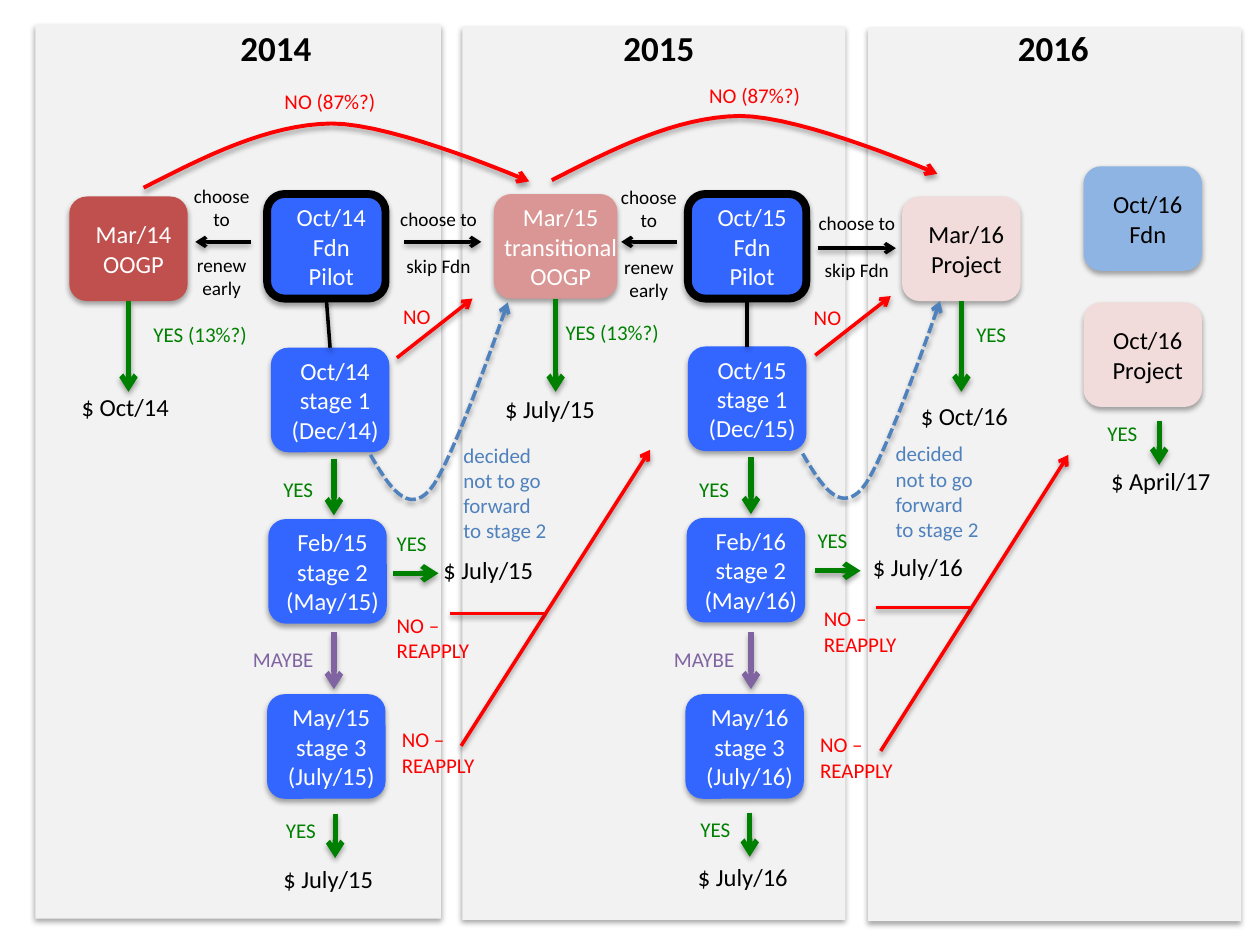
"""Builds a flow chart slide of funding application rounds from 2014 to 2016."""
from lxml.etree import SubElement
from pptx import Presentation
from pptx.dml.color import RGBColor
from pptx.enum.dml import MSO_LINE
from pptx.enum.shapes import MSO_CONNECTOR, MSO_SHAPE
from pptx.enum.text import MSO_ANCHOR, PP_ALIGN
from pptx.oxml.ns import qn
from pptx.util import Inches, Pt

COLORS = {
    "panel": "F2F2F2", "black": "000000", "white": "FFFFFF", "blue": "3366FF",
    "brick": "C0504D", "rose": "D99694", "blush": "F2DCDB", "sky": "8EB4E3",
    "green": "008000", "red": "FF0000", "purple": "8064A2", "steel": "4F81BD",
}
RGB = {name: RGBColor.from_string(value) for name, value in COLORS.items()}


def finish(shape, color=None, width=0, arrow=False, dashed=False):
    """Sets the outline, the arrowhead and the soft shadow of a shape."""
    if color:
        shape.line.color.rgb = RGB[color]
        shape.line.width = Pt(width)
    else:
        shape.line.fill.background()
    if dashed:
        shape.line.dash_style = MSO_LINE.SQUARE_DOT
    properties = shape._element.spPr
    if arrow:
        SubElement(properties.find(qn("a:ln")), qn("a:tailEnd"), type="arrow")
    effects = SubElement(properties, qn("a:effectLst"))
    shadow = SubElement(effects, qn("a:outerShdw"), blurRad=str(Pt(3.1)), dist=str(Pt(1.8)),
                        dir="5400000", algn="t", rotWithShape="0")
    shadow_color = SubElement(shadow, qn("a:srgbClr"), val=COLORS["black"])
    SubElement(shadow_color, qn("a:alpha"), val="35000")


def write(shape, text, size, color, align=PP_ALIGN.LEFT, wrap=False, bold=False, gap=0):
    """Writes formatted lines, with a gap in points between paragraphs."""
    frame = shape.text_frame
    frame.word_wrap = wrap
    frame.text = text
    for index, paragraph in enumerate(frame.paragraphs):
        paragraph.alignment = align
        if index:
            paragraph.space_before = Pt(gap)
        for run in paragraph.runs:
            run.font.name = "Calibri"
            run.font.size = Pt(size)
            run.font.bold = bold
            run.font.color.rgb = RGB[color]


presentation = Presentation()
presentation.slide_width, presentation.slide_height = Inches(10), Inches(7.5)
slide = presentation.slides.add_slide(presentation.slide_layouts[6])
shapes = slide.shapes

for left, top, width in [(6.89, 0.22, 2.96), (3.67, 0.21, 3.04), (0.28, 0.2, 3.22)]:
    panel = shapes.add_shape(MSO_SHAPE.RECTANGLE, Inches(left), Inches(top), Inches(width), Inches(7.09))
    panel.fill.solid()
    panel.fill.fore_color.rgb = RGB["panel"]
    finish(panel)

BOX_WIDTH, BOX_HEIGHT = 0.94, 0.83
box_rows = [
    ("Mar/14\nOOGP", 0.55, 1.56, "brick", "white"),
    ("Oct/14\nFdn\nPilot", 2.12, 1.54, "blue", "white"),
    ("Mar/15\ntransitional\nOOGP", 3.92, 1.54, "rose", "white"),
    ("Oct/15\nFdn\nPilot", 5.46, 1.54, "blue", "white"),
    ("Mar/16\nProject", 7.16, 1.56, "blush", "black"),
    ("Oct/16\nProject", 8.6, 2.4, "blush", "black"),
    ("Oct/16\nFdn", 8.6, 1.32, "sky", "black"),
    ("Oct/14\nstage 1\n(Dec/14)", 2.15, 2.76, "blue", "white"),
    ("Feb/15\nstage 2\n(May/15)", 2.13, 4.12, "blue", "white"),
    ("May/15\nstage 3\n(July/15)", 2.12, 5.51, "blue", "white"),
    ("Oct/15\nstage 1\n(Dec/15)", 5.46, 2.75, "blue", "white"),
    ("Feb/16\nstage 2\n(May/16)", 5.45, 4.11, "blue", "white"),
    ("May/16\nstage 3\n(July/16)", 5.44, 5.51, "blue", "white"),
]
boxes = {}
for text, left, top, fill, font_color in box_rows:
    width = 0.98 if "transitional" in text else BOX_WIDTH
    box = shapes.add_shape(MSO_SHAPE.ROUNDED_RECTANGLE, Inches(left), Inches(top),
                           Inches(width), Inches(BOX_HEIGHT))
    box.fill.solid()
    box.fill.fore_color.rgb = RGB[fill]
    finish(box, "black" if "Pilot" in text else None, 4.5)
    write(box, text, 14, font_color, PP_ALIGN.CENTER)
    frame = box.text_frame
    frame.margin_left, frame.margin_right = Inches(0.08), Inches(0)
    frame.margin_top = frame.margin_bottom = Inches(0)
    frame.vertical_anchor = MSO_ANCHOR.MIDDLE
    boxes[text.replace("\n", " ")] = box

line_rows = [
    (3.21, 1.92, 3.82, 1.92, "black", 2, True),
    (6.49, 1.97, 7.11, 1.97, "black", 2, True),
    (1.99, 1.92, 1.55, 1.92, "black", 2, True),
    (5.37, 1.92, 4.93, 1.92, "black", 2, True),
    (2.65, 3.64, 2.65, 4.09, "green", 3, True),
    (5.96, 3.63, 5.96, 4.08, "green", 3, True),
    (2.65, 5.02, 2.65, 5.47, "purple", 3, True),
    (5.96, 5.02, 5.96, 5.47, "purple", 3, True),
    (2.66, 6.46, 2.66, 6.81, "green", 3, True),
    (5.95, 6.45, 5.95, 6.8, "green", 3, True),
    (9.2, 3.34, 9.2, 3.69, "green", 3, True),
    (3.12, 4.55, 3.48, 4.55, "green", 3, True),
    (6.47, 4.53, 6.83, 4.53, "green", 3, True),
    (3.15, 2.84, 3.75, 2.37, "red", 2, True),
    (6.47, 2.82, 7.07, 2.35, "red", 2, True),
    (3.66, 5.92, 5.16, 3.57, "red", 2, True),
    (6.99, 5.96, 8.48, 3.61, "red", 2, True),
    (3.57, 4.87, 4.32, 4.87, "red", 2, False),
    (6.95, 4.82, 7.71, 4.82, "red", 2, False),
]
for x1, y1, x2, y2, color, width, arrow in line_rows:
    line = shapes.add_connector(MSO_CONNECTOR.STRAIGHT, Inches(x1), Inches(y1), Inches(x2), Inches(y2))
    finish(line, color, width, arrow)

for name in ["Mar/14 OOGP", "Mar/15 transitional OOGP", "Mar/16 Project"]:
    box = boxes[name]
    center = box.left + box.width // 2
    award_arrow = shapes.add_connector(MSO_CONNECTOR.STRAIGHT, center, box.top + box.height,
                                       center, Inches(3.11))
    award_arrow.begin_connect(box, 2)
    finish(award_arrow, "green", 3, True)

for pilot, stage in [("Oct/14 Fdn Pilot", "Oct/14 stage 1 (Dec/14)"),
                     ("Oct/15 Fdn Pilot", "Oct/15 stage 1 (Dec/15)")]:
    link = shapes.add_connector(MSO_CONNECTOR.STRAIGHT, 0, 0, 0, 0)
    link.begin_connect(boxes[pilot], 2)
    link.end_connect(boxes[stage], 0)
    finish(link, "black", 2)

rejected = [(1.14, 1.49), (1.63, 1.24), (2.12, 0.99), (2.63, 0.98), (3.14, 0.98), (4.2, 1.44), (4.2, 1.44)]
withdrawn = [(2.94, 3.61), (3.08, 3.85), (3.23, 4.09), (3.41, 3.89), (3.59, 3.69), (4.03, 2.4), (4.03, 2.4)]
STEPS = 16
for controls, dx, dy, color, width, dashed in [
    (rejected, 0, 0, "red", 2.25, False), (rejected, 3.24, -0.06, "red", 2.25, False),
    (withdrawn, 0, 0, "steel", 2, True), (withdrawn, 3.43, -0.01, "steel", 2, True),
]:
    points = []
    for first in (0, 3):
        for step in range(1, STEPS + 1):
            t = step / STEPS
            weights = [(1 - t) ** 3, 3 * t * (1 - t) ** 2, 3 * t ** 2 * (1 - t), t ** 3]
            segment = list(zip(weights, controls[first:first + 4]))
            points.append((Inches(dx + sum(weight * x for weight, (x, y) in segment)),
                           Inches(dy + sum(weight * y for weight, (x, y) in segment))))
    builder = shapes.build_freeform(Inches(controls[0][0] + dx), Inches(controls[0][1] + dy))
    builder.add_line_segments(points, close=False)
    curve = builder.convert_to_shape()
    curve.fill.background()
    finish(curve, color, width, True, dashed)

label_rows = [
    ("YES", 12, "green", 0.46, 0.3, [(7.65, 2.5), (2.15, 3.73), (5.45, 3.73), (3.05, 4.16), (6.39, 4.14),
                                     (2.17, 6.44), (5.46, 6.43), (8.69, 3.29)]),
    ("YES (13%?)", 12, "green", 0.97, 0.3, [(1.12, 2.5), (4.39, 2.49)]),
    ("NO (87%?)", 12, "red", 0.93, 0.3, [(2.16, 0.65), (5.53, 0.61)]),
    ("NO", 12, "red", 0.42, 0.3, [(3.1, 2.36), (6.36, 2.37)]),
    ("NO –\nREAPPLY", 12, "red", 0.81, 0.5, [(3.05, 4.81), (3.09, 5.72), (6.44, 4.76), (6.41, 5.76)]),
    ("MAYBE", 12, "purple", 0.7, 0.3, [(1.91, 5.08), (5.25, 5.08)]),
    ("decided not to go forward to stage 2", 12, "steel", 0.9, 0.91, [(3.58, 3.46), (7.01, 3.45)]),
    ("$ Oct/14", 14, "black", 0.9, 0.34, [(0.55, 3.06)]),
    ("$ Oct/16", 14, "black", 0.9, 0.34, [(7.21, 3.13)]),
    ("$ July/15", 14, "black", 0.92, 0.34, [(3.91, 3.08), (3.42, 4.36), (2.15, 6.81)]),
    ("$ July/16", 14, "black", 0.92, 0.34, [(6.83, 4.33), (5.44, 6.79)]),
    ("$ April/17", 14, "black", 1, 0.34, [(8.72, 3.65)]),
    ("2014", 20, "black", 0.77, 0.44, [(1.81, 0.16)]),
    ("2015", 20, "black", 0.77, 0.44, [(4.85, 0.16)]),
    ("2016", 20, "black", 0.77, 0.44, [(7.98, 0.16)]),
    ("choose to\nskip Fdn", 11, "black", 0.82, 0.66, [(3.07, 1.6), (6.39, 1.63)]),
    ("choose to\nrenew early", 11, "black", 0.7, 1.03, [(1.41, 1.41), (4.8, 1.42)]),
]
for text, size, color, width, height, places in label_rows:
    choice = text.startswith("choose")
    for left, top in places:
        label = shapes.add_textbox(Inches(left), Inches(top), Inches(width), Inches(height))
        write(label, text, size, color, PP_ALIGN.CENTER if choice else PP_ALIGN.LEFT,
              wrap=choice or text.startswith("decided"), bold=size == 20, gap=13.4 if choice else 0)

presentation.save("out.pptx")
